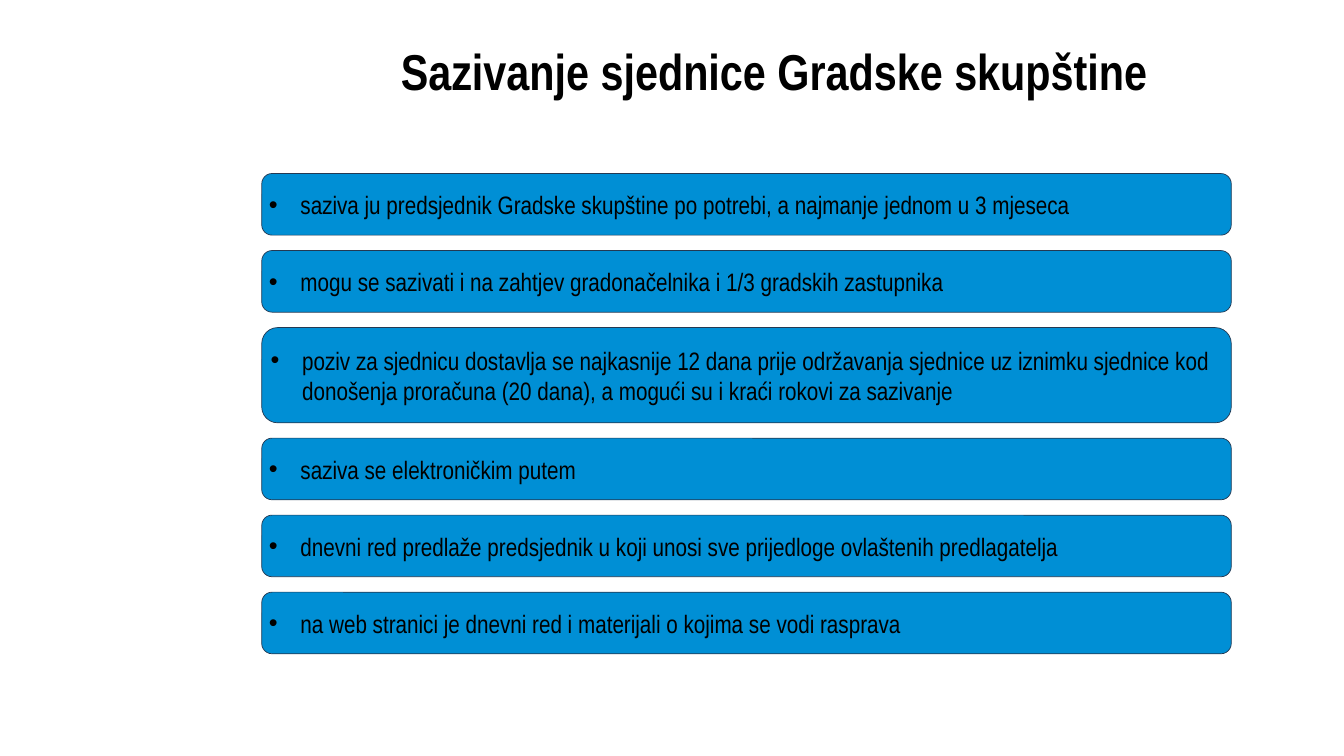
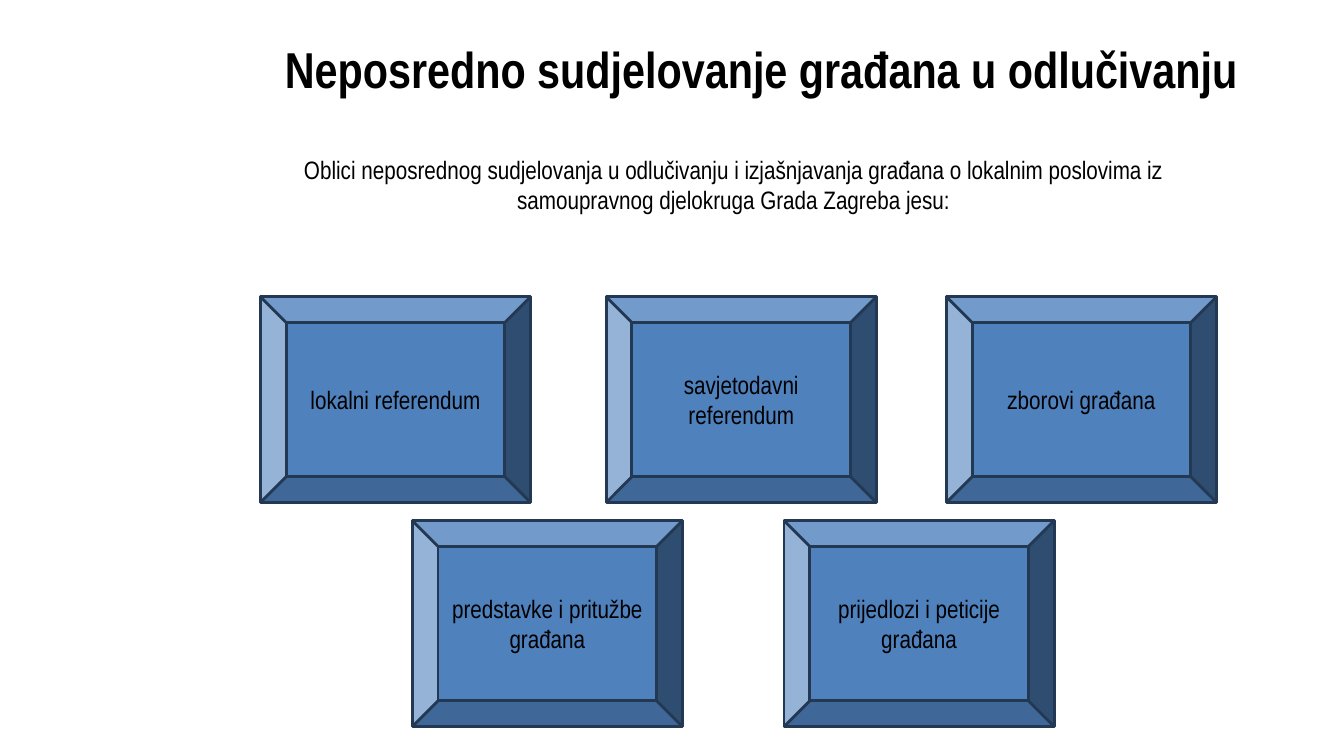
from dataclasses import dataclass

from lxml import etree
from pptx import Presentation
from pptx.dml.color import RGBColor
from pptx.enum.shapes import MSO_SHAPE
from pptx.enum.text import MSO_ANCHOR, PP_ALIGN
from pptx.oxml.ns import qn
from pptx.util import Pt

ROUNDED = MSO_SHAPE.ROUNDED_RECTANGLE
BEVEL = MSO_SHAPE.BEVEL
TOP = MSO_ANCHOR.TOP
MIDDLE = MSO_ANCHOR.MIDDLE
LEFT = PP_ALIGN.LEFT
CENTER = PP_ALIGN.CENTER
BLANK_LAYOUT = 6


@dataclass(frozen=True)
class Theme:
    font: str = "Arial Narrow"
    text: RGBColor = RGBColor(0x00, 0x00, 0x00)
    background: RGBColor = RGBColor(0xFF, 0xFF, 0xFF)
    bar: RGBColor = RGBColor(0x00, 0x8F, 0xD5)
    tile: RGBColor = RGBColor(0x4F, 0x81, 0xBD)
    outline: RGBColor = RGBColor(0x23, 0x39, 0x53)
    title_size: int = 36
    body_size: int = 18
    bullet_indent: float = 22.5


class Deck:
    def __init__(self, theme):
        self.theme = theme
        self.presentation = Presentation()
        self.presentation.slide_width = Pt(960)
        self.presentation.slide_height = Pt(540)
        self.slide = None

    def new_slide(self):
        layout = self.presentation.slide_layouts[BLANK_LAYOUT]
        self.slide = self.presentation.slides.add_slide(layout)
        fill = self.slide.background.fill
        fill.solid()
        fill.fore_color.rgb = self.theme.background

    def set_text(self, shape, text, size, align=CENTER, anchor=MIDDLE, bold=False):
        frame = shape.text_frame
        frame.word_wrap = True
        frame.vertical_anchor = anchor
        frame.text = text
        paragraph = frame.paragraphs[0]
        paragraph.alignment = align
        for run in paragraph.runs:
            run.font.name = self.theme.font
            run.font.size = Pt(size)
            run.font.bold = bold
            run.font.color.rgb = self.theme.text
        return paragraph

    def text_box(self, text, left, top, width, height, size, bold=False):
        shape = self.slide.shapes.add_textbox(
            Pt(left), Pt(top), Pt(width), Pt(height))
        frame = shape.text_frame
        frame.margin_left = frame.margin_right = Pt(0)
        frame.margin_top = frame.margin_bottom = Pt(0)
        self.set_text(shape, text, size, anchor=TOP, bold=bold)

    def title(self, text, center, top):
        width = 700
        self.text_box(text, center - width / 2, top, width, 44,
                      self.theme.title_size, bold=True)

    def intro(self, text, left, top, width, height):
        self.text_box(text, left, top, width, height, self.theme.body_size)

    def panel(self, kind, left, top, width, height, color, line_width):
        shape = self.slide.shapes.add_shape(
            kind, Pt(left), Pt(top), Pt(width), Pt(height))
        shape.shadow.inherit = False
        shape.fill.solid()
        shape.fill.fore_color.rgb = color
        shape.line.color.rgb = self.theme.outline
        shape.line.width = Pt(line_width)
        return shape

    def bullet_bar(self, text, left, top, width, height):
        shape = self.panel(ROUNDED, left, top, width, height, self.theme.bar, 0.5)
        shape.text_frame.margin_left = Pt(3)
        shape.text_frame.margin_right = Pt(3)
        paragraph = self.set_text(shape, text, self.theme.body_size, align=LEFT)
        indent = Pt(self.theme.bullet_indent)
        properties = paragraph._p.get_or_add_pPr()
        properties.set("marL", str(indent))
        properties.set("indent", str(-indent))
        etree.SubElement(properties, qn("a:buFont")).set("typeface", "Arial")
        etree.SubElement(properties, qn("a:buChar")).set("char", "•")

    def tile(self, text, left, top, width, height):
        shape = self.panel(BEVEL, left, top, width, height, self.theme.tile, 2)
        self.set_text(shape, text, self.theme.body_size)

    def save(self):
        self.presentation.save("out.pptx")


def session_slide(deck):
    deck.new_slide()
    deck.title("Sazivanje sjednice Gradske skupštine", center=553, top=28.5)
    single, double, gap = 44, 68, 11
    bars = [
        ("saziva ju predsjednik Gradske skupštine po potrebi, "
         "a najmanje jednom u 3 mjeseca", single),
        ("mogu se sazivati i na zahtjev gradonačelnika "
         "i 1/3 gradskih zastupnika", single),
        ("poziv za sjednicu dostavlja se najkasnije 12 dana prije održavanja "
         "sjednice uz iznimku sjednice kod donošenja proračuna (20 dana), "
         "a mogući su i kraći rokovi za sazivanje", double),
        ("saziva se elektroničkim putem", single),
        ("dnevni red predlaže predsjednik u koji unosi sve prijedloge "
         "ovlaštenih predlagatelja", single),
        ("na web stranici je dnevni red i materijali o kojima se vodi rasprava",
         single),
    ]
    top = 124
    for text, height in bars:
        deck.bullet_bar(text, 187, top, 692.5, height)
        top += height + gap


def participation_slide(deck):
    deck.new_slide()
    deck.title("Neposredno sudjelovanje građana u odlučivanju", center=544, top=27)
    deck.intro("Oblici neposrednog sudjelovanja u odlučivanju i izjašnjavanja "
               "građana o lokalnim poslovima iz samoupravnog djelokruga "
               "Grada Zagreba jesu:", 179, 110, 690, 50)
    rows = [
        (212, [(186, "lokalni referendum"),
               (433, "savjetodavni referendum"),
               (676, "zborovi građana")]),
        (372, [(294.5, "predstavke i pritužbe građana"),
               (560, "prijedlozi i peticije građana")]),
    ]
    for top, tiles in rows:
        for left, text in tiles:
            deck.tile(text, left, top, 193, 147)


def main():
    deck = Deck(Theme())
    session_slide(deck)
    participation_slide(deck)
    deck.save()


if __name__ == "__main__":
    main()
